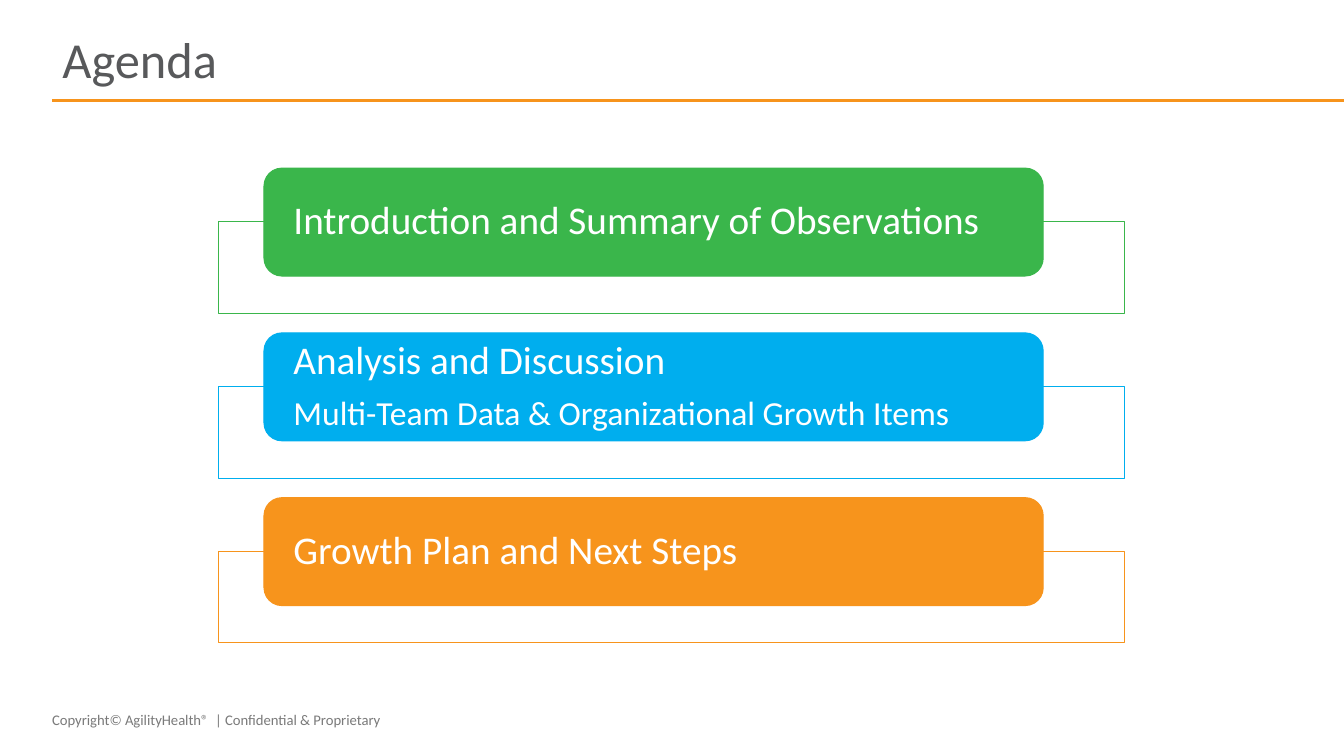
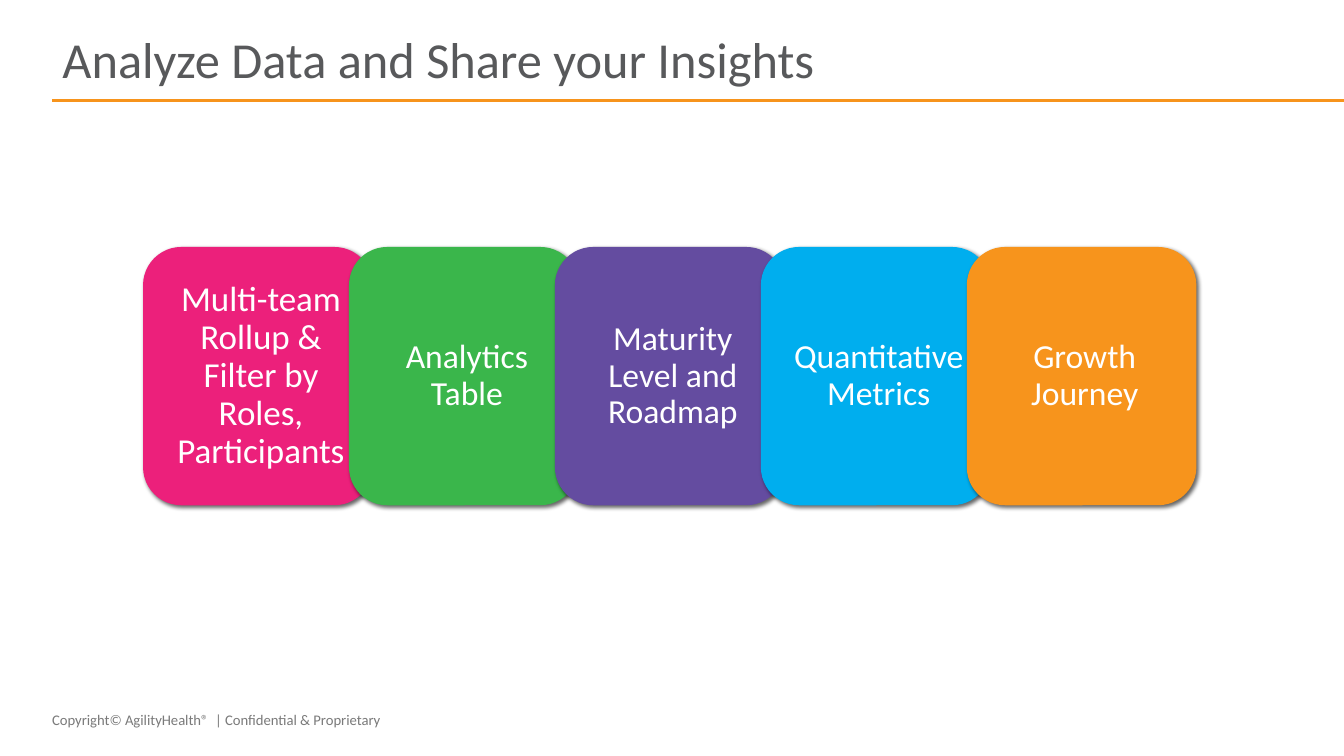
from dataclasses import dataclass

from lxml.etree import SubElement
from pptx import Presentation
from pptx.dml.color import RGBColor
from pptx.enum.shapes import MSO_CONNECTOR, MSO_SHAPE
from pptx.enum.text import MSO_ANCHOR, MSO_AUTO_SIZE, PP_ALIGN
from pptx.oxml.ns import qn
from pptx.presentation import Presentation as Deck
from pptx.shapes.autoshape import Shape
from pptx.slide import Slide
from pptx.text.text import TextFrame
from pptx.util import Pt

SLIDE_WIDTH, SLIDE_HEIGHT = 960, 540
TITLE_ONLY = 5
FONT = "Calibri"
WHITE, TITLE_GREY, FOOTER_GREY = "FFFFFF", "58595B", "7A7A7A"
PINK, GREEN, PURPLE, BLUE, ORANGE = "EC207B", "3AB64B", "644CA0", "00AEEE", "F7941C"
MARGIN = 37.4
FOOTER = "Copyright© AgilityHealth®  | Confidential & Proprietary"

AGENDA_PITCH = 117.7
CARD_PITCH = 147.1


@dataclass(frozen=True)
class TextLine:
    text: str
    size: float = 24


@dataclass(frozen=True)
class Box:
    left: float
    top: float
    width: float
    height: float

    def moved(self, right: float = 0, down: float = 0) -> "Box":
        return Box(self.left + right, self.top + down, self.width, self.height)

    def lengths(self) -> tuple[Pt, Pt, Pt, Pt]:
        return Pt(self.left), Pt(self.top), Pt(self.width), Pt(self.height)


@dataclass(frozen=True)
class AgendaItem:
    color: str
    lines: tuple[TextLine, ...]


@dataclass(frozen=True)
class Card:
    color: str
    line: TextLine


AGENDA_FRAME = Box(156.2, 158.2, 646.6, 65.5)
AGENDA_LABEL = Box(188.6, 120.1, 556.6, 77.1)
CARD = Box(102.2, 176.4, 164, 184.5)

AGENDA = (
    AgendaItem(GREEN, (TextLine("Introduction and Summary of Observations", 28),)),
    AgendaItem(BLUE, (TextLine("Analysis and Discussion", 28),
                      TextLine("Multi-Team Data & Organizational Growth Items"))),
    AgendaItem(ORANGE, (TextLine("Growth Plan and Next Steps", 28),)),
)
CARDS = (
    Card(PINK, TextLine("Multi-team Rollup & Filter by Roles, Participants", 25)),
    Card(GREEN, TextLine("Analytics Table")),
    Card(PURPLE, TextLine("Maturity Level and Roadmap")),
    Card(BLUE, TextLine("Quantitative Metrics")),
    Card(ORANGE, TextLine("Growth Journey")),
)


def rgb(color: str) -> RGBColor:
    return RGBColor.from_string(color)


def write(frame: TextFrame, lines: tuple[TextLine, ...], color: str,
          align: PP_ALIGN = PP_ALIGN.LEFT, spacing: float = 0.9, after: float = 0) -> None:
    frame.word_wrap = True
    frame.vertical_anchor = MSO_ANCHOR.MIDDLE
    for index, line in enumerate(lines):
        paragraph = frame.add_paragraph() if index else frame.paragraphs[0]
        paragraph.text = line.text
        paragraph.alignment = align
        paragraph.line_spacing = spacing
        paragraph.space_before = Pt(0)
        paragraph.space_after = Pt(after)
        paragraph.font.name = FONT
        paragraph.font.size = Pt(line.size)
        paragraph.font.color.rgb = rgb(color)


def set_insets(frame: TextFrame, left: float, top: float, right: float, bottom: float) -> None:
    frame.margin_left, frame.margin_top = Pt(left), Pt(top)
    frame.margin_right, frame.margin_bottom = Pt(right), Pt(bottom)


def add_panel(slide: Slide, kind: MSO_SHAPE, box: Box, fill: str,
              outline: str | None = None, weight: float = 0) -> Shape:
    panel = slide.shapes.add_shape(kind, *box.lengths())
    panel.shadow.inherit = False
    panel.fill.solid()
    panel.fill.fore_color.rgb = rgb(fill)
    if outline:
        panel.line.color.rgb = rgb(outline)
        panel.line.width = Pt(weight)
    else:
        panel.line.fill.background()
    return panel


def set_opacity(panel: Shape, percent: int) -> None:
    color = panel.fill._xPr.find(qn("a:solidFill"))[0]
    SubElement(color, qn("a:alpha"), val=str(percent * 1000))


def add_soft_shadow(panel: Shape) -> None:
    effects = panel._element.spPr.find(qn("a:effectLst"))
    shadow = SubElement(effects, qn("a:outerShdw"), blurRad=str(Pt(3)), dist=str(Pt(2)),
                        dir=str(45 * 60000), algn="tl", rotWithShape="0")
    color = SubElement(shadow, qn("a:srgbClr"), val="000000")
    SubElement(color, qn("a:alpha"), val="60000")


def add_titled_slide(deck: Deck, heading: str) -> Slide:
    """Add a slide with the shared title, rule and footer."""
    slide = deck.slides.add_slide(deck.slide_layouts[TITLE_ONLY])
    title = slide.shapes.title
    title.left, title.top, title.width, title.height = Box(MARGIN, 19.4, 885, 50.4).lengths()
    title.text_frame.auto_size = MSO_AUTO_SIZE.NONE
    write(title.text_frame, (TextLine(heading, 36),), TITLE_GREY)

    rule = slide.shapes.add_connector(MSO_CONNECTOR.STRAIGHT,
                                      Pt(MARGIN), Pt(72), Pt(SLIDE_WIDTH), Pt(72))
    rule.line.color.rgb = rgb(ORANGE)
    rule.line.width = Pt(2)
    SubElement(rule._element.spPr, qn("a:effectLst"))

    footer = slide.shapes.add_textbox(*Box(30.2, 504, 324, 20).lengths()).text_frame
    write(footer, (TextLine(FOOTER, 10.5),), FOOTER_GREY, spacing=1.0)
    footer.vertical_anchor = MSO_ANCHOR.TOP
    footer.auto_size = MSO_AUTO_SIZE.SHAPE_TO_FIT_TEXT
    return slide


def add_agenda_item(slide: Slide, item: AgendaItem, down: float) -> None:
    frame = add_panel(slide, MSO_SHAPE.RECTANGLE, AGENDA_FRAME.moved(down=down),
                      WHITE, item.color, 0.5)
    set_opacity(frame, 90)
    label = add_panel(slide, MSO_SHAPE.ROUNDED_RECTANGLE, AGENDA_LABEL.moved(down=down),
                      item.color, item.color, 0.75)
    set_insets(label.text_frame, 17.3, 0, 17.3, 0)
    write(label.text_frame, item.lines, WHITE, after=10)


def add_card(slide: Slide, card: Card, right: float) -> None:
    panel = add_panel(slide, MSO_SHAPE.ROUNDED_RECTANGLE, CARD.moved(right=right), card.color)
    add_soft_shadow(panel)
    set_insets(panel.text_frame, 7.5, 3, 3, 3)
    write(panel.text_frame, (card.line,), WHITE, PP_ALIGN.CENTER)


def main() -> None:
    deck = Presentation()
    deck.slide_width, deck.slide_height = Pt(SLIDE_WIDTH), Pt(SLIDE_HEIGHT)

    agenda = add_titled_slide(deck, "Agenda")
    for row, item in enumerate(AGENDA):
        add_agenda_item(agenda, item, row * AGENDA_PITCH)

    insights = add_titled_slide(deck, "Analyze Data and Share your Insights")
    for column, card in enumerate(CARDS):
        add_card(insights, card, column * CARD_PITCH)

    deck.save("out.pptx")


if __name__ == "__main__":
    main()
